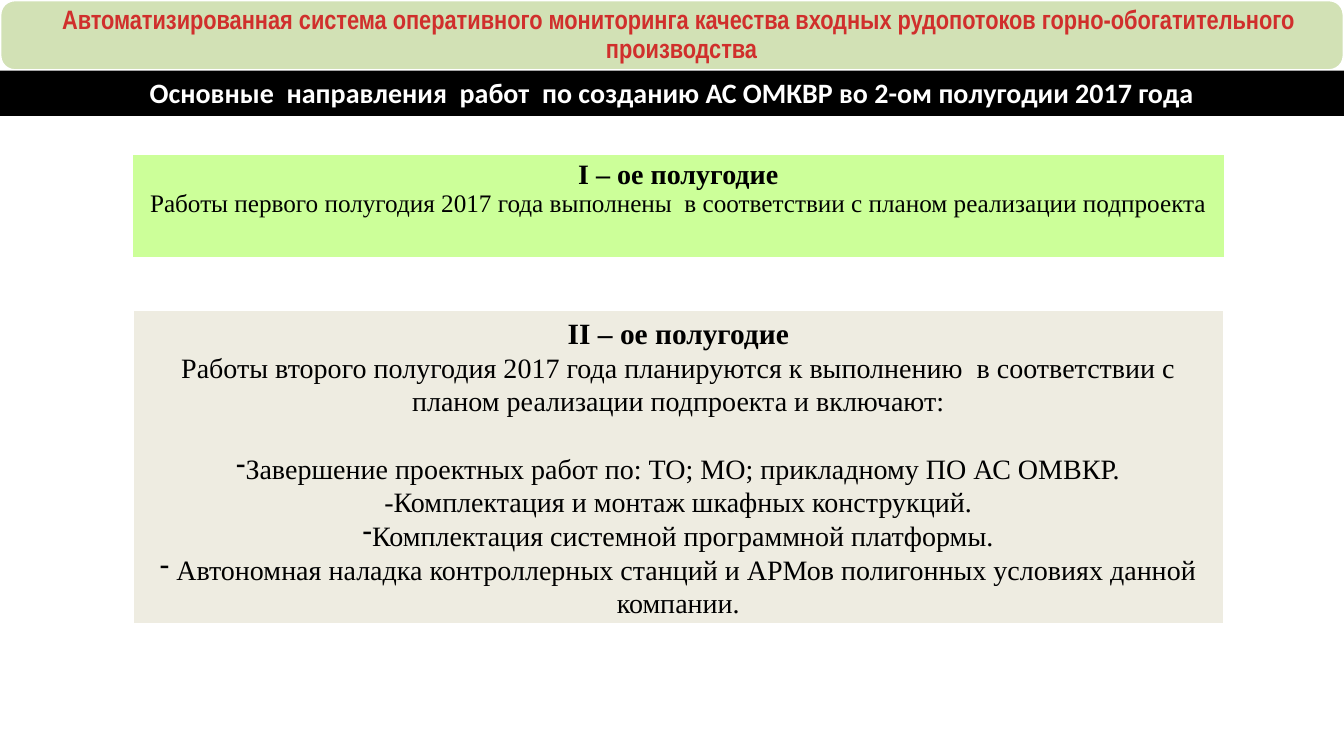
from lxml.etree import SubElement
from pptx import Presentation
from pptx.dml.color import RGBColor
from pptx.enum.shapes import MSO_SHAPE
from pptx.enum.text import MSO_ANCHOR, PP_ALIGN
from pptx.oxml.ns import qn
from pptx.util import Pt

WIDTH, HEIGHT = 960, 540
SERIF = "Times New Roman"


def color(hex_text):
    """Turn a hex string into a colour."""
    return RGBColor.from_string(hex_text)


def write(frame, text, first=False, font=SERIF, size=20, ink="000000",
          bold=False, bullet=None, before=0, spacing=None):
    """Add one centred paragraph to a text frame."""
    para = frame.paragraphs[0] if first else frame.add_paragraph()
    if bullet:
        properties = para._p.get_or_add_pPr()
        properties.set("marL", "0")
        properties.set("indent", "0")
        SubElement(properties, qn("a:buChar")).set("char", bullet)
    para.alignment = PP_ALIGN.CENTER
    if before:
        para.space_before = Pt(before)
    if spacing:
        para.line_spacing = spacing
    span = para.add_run()
    span.text = text
    span.font.name = font
    span.font.size = Pt(size)
    span.font.bold = bold
    span.font.color.rgb = color(ink)


def set_margins(holder, left, top, right, bottom):
    """Set the inner margins of a text frame or a cell."""
    holder.margin_left, holder.margin_top = Pt(left), Pt(top)
    holder.margin_right, holder.margin_bottom = Pt(right), Pt(bottom)


def add_panel(page, box, fill, kind=MSO_SHAPE.RECTANGLE, line=None,
              anchor=MSO_ANCHOR.MIDDLE, margins=(7.9, 3.6, 7.9, 3.6)):
    """Add a flat filled shape ready for text."""
    panel = page.shapes.add_shape(kind, *map(Pt, box))
    panel.shadow.inherit = False
    panel.fill.solid()
    panel.fill.fore_color.rgb = color(fill)
    if line:
        panel.line.color.rgb = color(line)
        panel.line.width = Pt(2)
    else:
        panel.line.fill.background()
    frame = panel.text_frame
    frame.word_wrap = True
    frame.vertical_anchor = anchor
    set_margins(frame, *margins)
    return panel


def add_title(page, box):
    """Place the rounded project title."""
    panel = add_panel(page, box, "D2E1B5", MSO_SHAPE.ROUNDED_RECTANGLE,
                      line="FFFFFF", margins=(21.6, 7.9, 7.9, 7.9))
    panel.adjustments[0] = 0.21
    write(panel.text_frame,
          "Автоматизированная система оперативного мониторинга качества "
          "входных рудопотоков горно-обогатительного  производства",
          first=True, font="Arial Narrow", size=19, ink="D02F2C", bold=True,
          spacing=0.9)


def add_heading(page, box):
    """Place the black heading bar."""
    panel = add_panel(page, box, "000000", anchor=MSO_ANCHOR.TOP)
    write(panel.text_frame,
          "Основные  направления  работ  по созданию АС ОМКВР "
          "во 2-ом полугодии 2017 года",
          first=True, font="Calibri", ink="FFFFFF", bold=True)


def add_first_half(page, box):
    """Place the one-cell table on the first half-year."""
    table = page.shapes.add_table(1, 1, *map(Pt, box)).table
    table.first_row = table.horz_banding = False
    cell = table.cell(0, 0)
    set_margins(cell, 9.4, 3.6, 9.4, 3.6)
    properties = cell._tc.get_or_add_tcPr()
    for side, width in (("L", 1), ("R", 1), ("T", 1), ("B", 3)):
        border = SubElement(properties, qn(f"a:ln{side}"), w=str(Pt(width)))
        paint = SubElement(border, qn("a:solidFill"))
        SubElement(paint, qn("a:srgbClr"), val="FFFFFF")
    cell.fill.solid()
    cell.fill.fore_color.rgb = color("CCFF99")
    frame = cell.text_frame
    write(frame, "I – ое полугодие", first=True, bold=True)
    write(frame, "Работы первого полугодия 2017 года выполнены  "
          "в соответствии с планом реализации подпроекта", size=18)


def add_second_half(page, box):
    """Place the panel with the plan for the second half-year."""
    frame = add_panel(page, box, "EEECE1", line="FFFFFF").text_frame
    write(frame, "II – ое полугодие", first=True, size=21, bold=True)
    write(frame, "Работы второго полугодия 2017 года планируются к выполнению  "
          "в соответствии с планом реализации подпроекта и включают:")
    write(frame, "Завершение проектных работ по: ТО; МО; "
          "прикладному ПО АС ОМВКР.", bullet="-", before=24)
    write(frame, "-Комплектация и монтаж шкафных конструкций.")
    write(frame, "Комплектация системной программной платформы.", bullet="-")
    write(frame, " Автономная наладка контроллерных станций и АРМов "
          "полигонных условиях данной компании.", bullet="-")


def main():
    """Build the slide and save it."""
    deck = Presentation()
    deck.slide_width, deck.slide_height = Pt(WIDTH), Pt(HEIGHT)
    page = deck.slides.add_slide(deck.slide_layouts[6])
    add_title(page, (0, 0, WIDTH, 50.4))
    add_heading(page, (0, 50.4, WIDTH, 32.4))
    add_first_half(page, (94.5, 110.2, 780, 74.9))
    add_second_half(page, (94.5, 221, 780, 225.4))
    deck.save("out.pptx")


if __name__ == "__main__":
    main()
